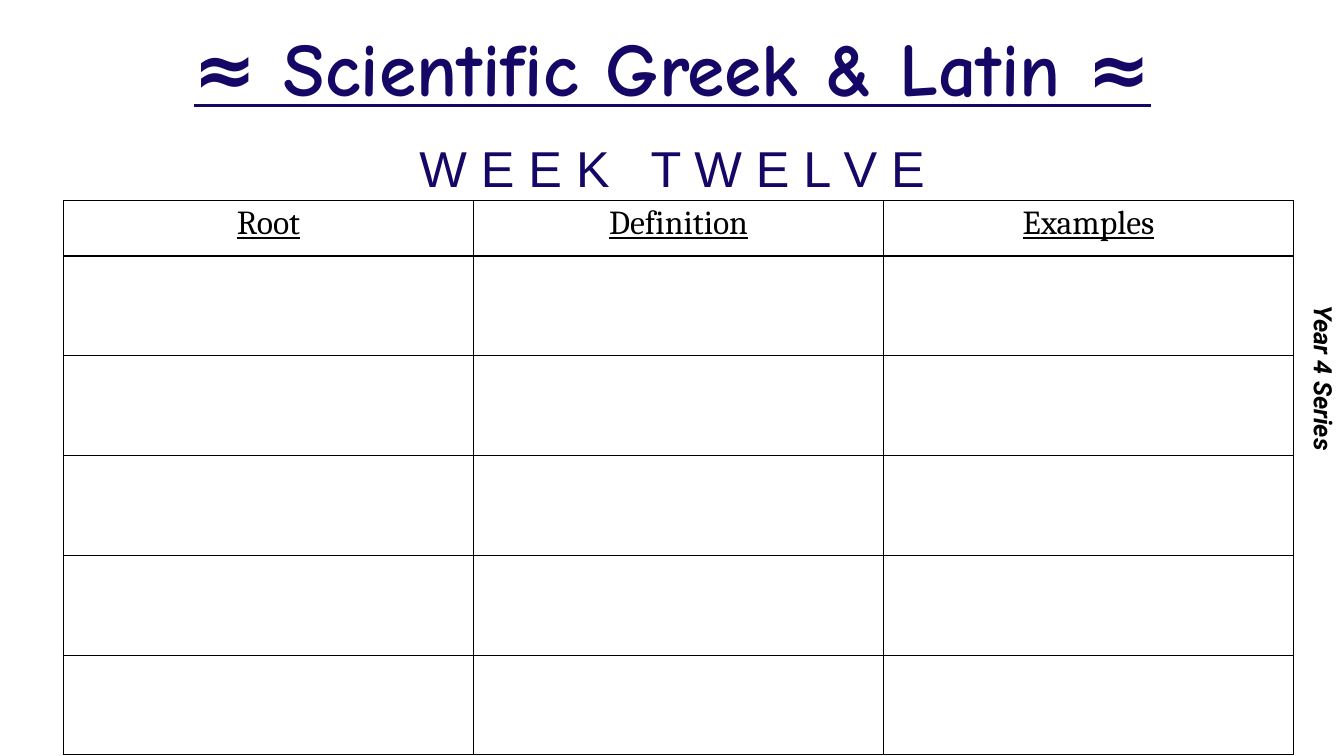
from pptx import Presentation
from pptx.dml.color import RGBColor
from pptx.enum.text import MSO_ANCHOR, PP_ALIGN
from pptx.oxml import parse_xml
from pptx.oxml.ns import nsdecls
from pptx.util import Inches, Pt

COLORS = {"navy": "150765", "black": "000000"}
HEADINGS = ["Root", "Definition", "Examples"]
ROOT_ROWS = 5


def write(frame, text, font_name, size, color):
    """Write one centred paragraph and return it."""
    frame.word_wrap = True
    para = frame.paragraphs[0]
    para.text = text
    para.alignment = PP_ALIGN.CENTER
    para.font.name = font_name
    para.font.size = Pt(size)
    para.font.color.rgb = RGBColor.from_string(COLORS[color])
    return para


deck = Presentation()
deck.slide_width, deck.slide_height = Inches(13.33), Inches(7.5)
page = deck.slides.add_slide(deck.slide_layouts[6])

# Title
title = page.shapes.add_textbox(Inches(1.67), 0, Inches(10), Inches(1.42))
title.text_frame.vertical_anchor = MSO_ANCHOR.MIDDLE
para = write(title.text_frame, "≈ Scientific Greek & Latin ≈", "Comic Neue", 54, "navy")
para.line_spacing = 0.9
para.font.bold = para.font.underline = True

# Week line
week = page.shapes.add_textbox(Inches(1.67), Inches(1.31), Inches(10), Inches(0.71))
write(week.text_frame, "W E E K   T W E L V E", "Arial", 36, "navy")

# Worksheet table: one heading row above empty rows to fill in
table = page.shapes.add_table(
    ROOT_ROWS + 1, len(HEADINGS), Inches(0.63), Inches(1.99), Inches(12.2), Inches(5.51)
).table
table.first_row = table.horz_banding = False
for column in table.columns:
    column.width = Inches(12.2 / len(HEADINGS))
for number, row in enumerate(table.rows):
    row.height = Inches(0.99 if number else 0.55)

for cell in table.iter_cells():
    cell.margin_left = cell.margin_right = Inches(0.07)
    cell.margin_top = cell.margin_bottom = Inches(0.04)
    properties = cell._tc.get_or_add_tcPr()
    for side in ("lnL", "lnR", "lnT", "lnB"):
        properties.append(parse_xml(
            f'<a:{side} {nsdecls("a")} w="{Pt(1)}"><a:solidFill>'
            f'<a:srgbClr val="{COLORS["black"]}"/></a:solidFill></a:{side}>'))
    cell.fill.background()

for number, heading in enumerate(HEADINGS):
    para = write(table.cell(0, number).text_frame, heading, "Cambria", 24, "black")
    para.font.underline = True

# Series label, running down the right edge
series = page.shapes.add_textbox(Inches(12.83), 0, Inches(0.5), Inches(7.5))
series.text_frame._txBody.bodyPr.set("vert", "vert")
para = write(series.text_frame, "Year 4 Series", "Roboto", 18, "black")
para.font.bold = para.font.italic = True

deck.save("out.pptx")
